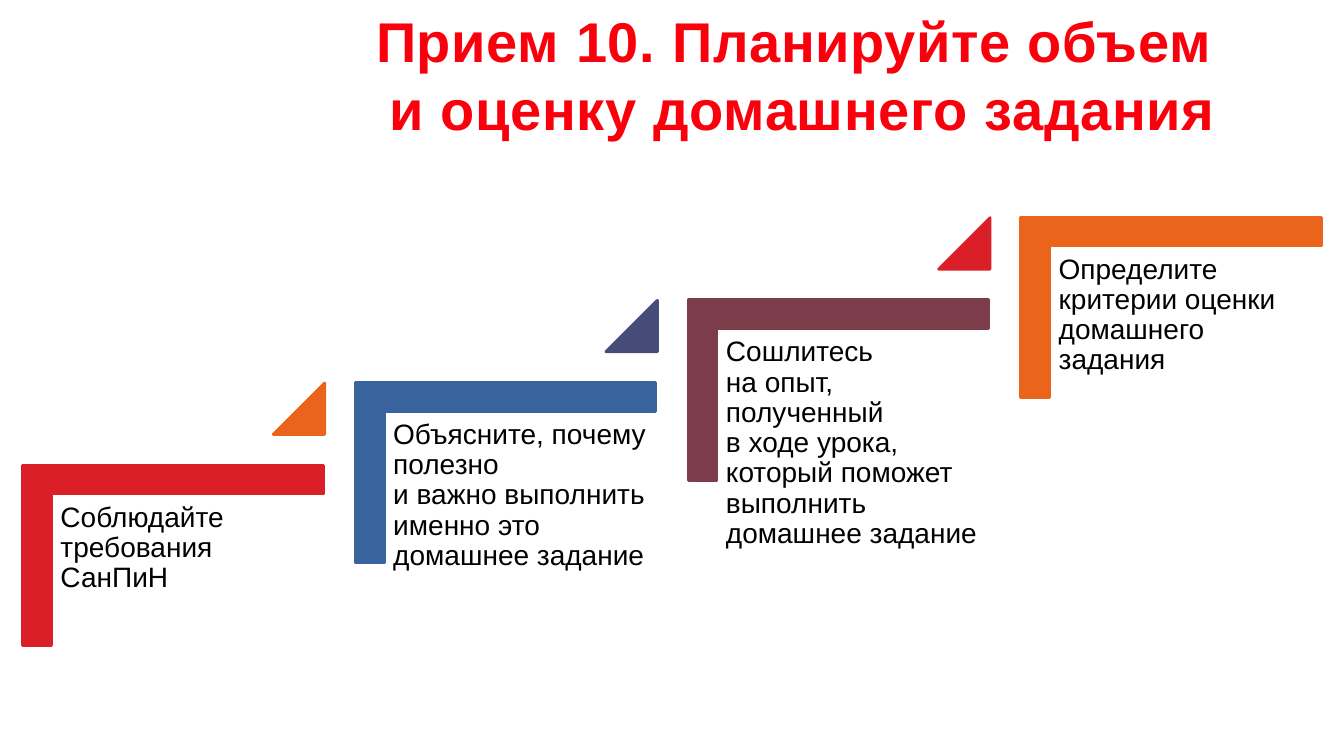
from pptx import Presentation
from pptx.dml.color import RGBColor as RGB
from pptx.enum.shapes import MSO_SHAPE as Shape
from pptx.enum.text import MSO_ANCHOR as Anchor, MSO_AUTO_SIZE as AutoSize, PP_ALIGN as Align
from pptx.util import Emu, Pt

COLORS = {
    "title": "F9000C",
    "text": "000000",
    "red": "DA1F28",
    "orange": "EB641B",
    "blue": "39639D",
    "indigo": "474B78",
    "plum": "7D3C4A",
}
STEPS = [
    ("Соблюдайте требования СанПиН", "red", "orange", Align.JUSTIFY),
    ("Объясните, почему полезно\vи важно выполнить именно это домашнее задание",
     "blue", "indigo", Align.LEFT),
    ("Сошлитесь\vна опыт, полученный \vв ходе урока, который поможет выполнить домашнее задание",
     "plum", "red", Align.LEFT),
    ("Определите критерии оценки домашнего задания", "orange", None, Align.LEFT),
]
STEP_RIGHT, STEP_UP = 330, 82


class Deck:
    FONT = "Arial"
    PX = 9144

    def __init__(self, width, height):
        self.prs = Presentation()
        self.prs.slide_width, self.prs.slide_height = self.px(width), self.px(height)
        self.slide = self.prs.slides.add_slide(self.prs.slide_layouts[5])

    def px(self, n):
        return Emu(n * self.PX)

    def box(self, *lengths):
        return [self.px(n) for n in lengths]

    def style(self, p, size, color, align, bold=False):
        p.alignment = align
        p.font.name = self.FONT
        p.font.size = Pt(size)
        p.font.bold = bold
        p.font.color.rgb = RGB.from_string(COLORS[color])

    def title(self, text, x, y, w, h):
        sp = self.slide.shapes.title
        sp.left, sp.top, sp.width, sp.height = self.box(x, y, w, h)
        tf = sp.text_frame
        tf.text = text
        tf.word_wrap = True
        tf.auto_size = AutoSize.NONE
        tf.vertical_anchor = Anchor.MIDDLE
        p = tf.paragraphs[0]
        self.style(p, 40, "title", Align.CENTER, bold=True)
        for r in p.runs:
            r.font._element.set("spc", "50")

    def shape(self, kind, color, x, y, w, h, adjustments, rotation=0):
        sp = self.slide.shapes.add_shape(kind, *self.box(x, y, w, h))
        sp.shadow.inherit = False
        sp.rotation = rotation
        for i, value in enumerate(adjustments):
            sp.adjustments[i] = value
        sp.fill.solid()
        sp.fill.fore_color.rgb = RGB.from_string(COLORS[color])
        sp.line.color.rgb = RGB.from_string(COLORS[color])
        sp.line.width = Pt(2)

    def text(self, text, align, x, y, w, h):
        tf = self.slide.shapes.add_textbox(*self.box(x, y, w, h)).text_frame
        tf.word_wrap = True
        tf.margin_left = tf.margin_right = tf.margin_top = tf.margin_bottom = self.px(8)
        tf.text = text
        p = tf.paragraphs[0]
        p.line_spacing = 0.9
        self.style(p, 20, "text", align)

    def step(self, index, text, color, next_color, align):
        x, y = 82 + index * STEP_RIGHT, 402 - index * STEP_UP
        self.shape(Shape.CORNER, color, x, y, 179, 298, (0.16, 0.16), rotation=90)
        self.text(text, align, x - 30, y + 89, 269, 236)
        if next_color:
            self.shape(Shape.ISOSCELES_TRIANGLE, next_color, x + 189, y - 22, 51, 51, (1,))


def main():
    deck = Deck(1333, 750)
    deck.title("Прием 10. Планируйте объем \vи оценку домашнего задания", 257, 2, 1078, 143)
    for index, step in enumerate(STEPS):
        deck.step(index, *step)
    deck.prs.save("out.pptx")


if __name__ == "__main__":
    main()
